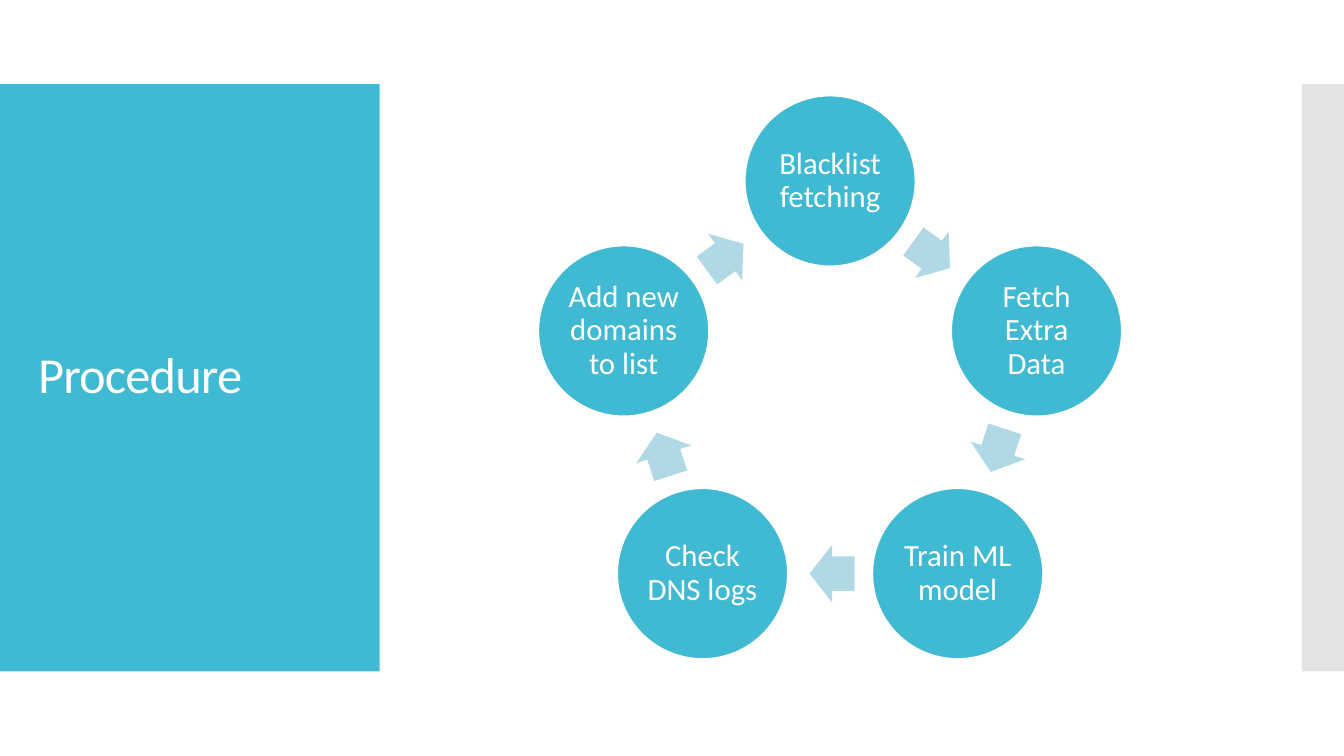
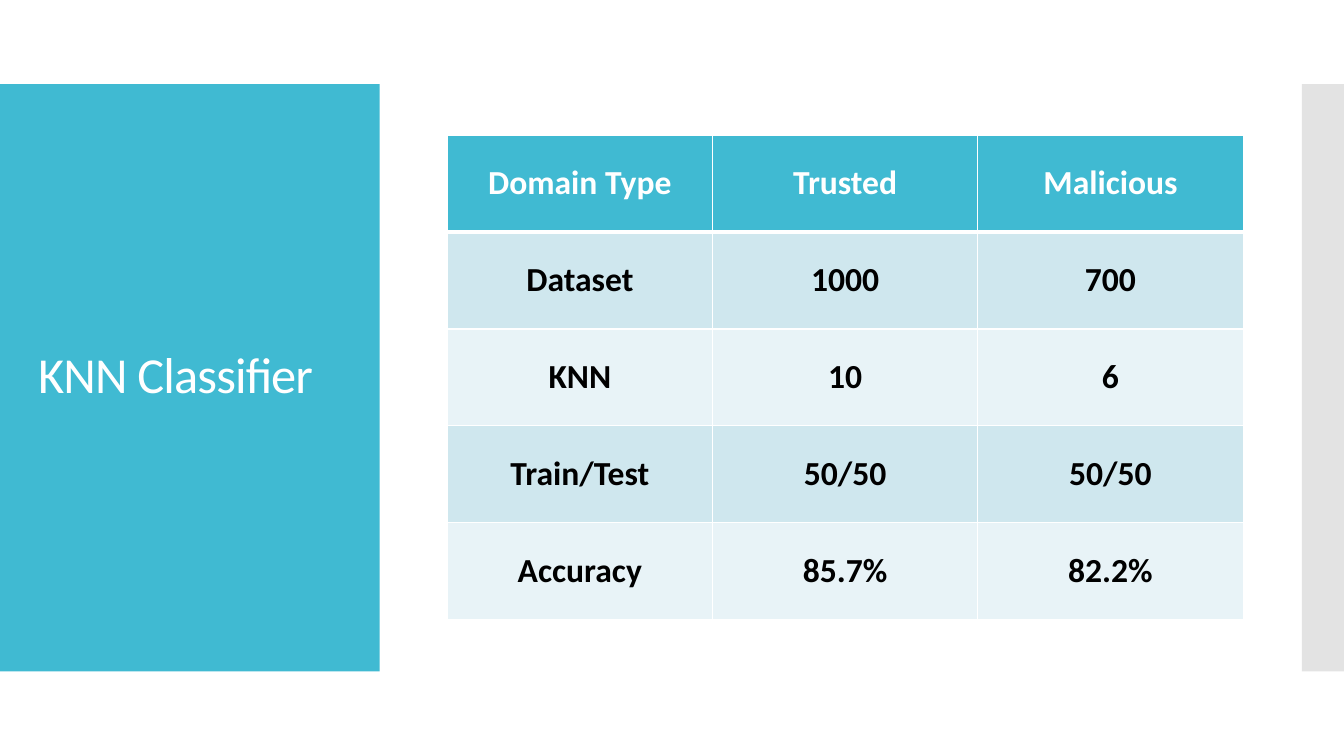
"""Builds two slides: the procedure cycle and the KNN classifier results."""
from dataclasses import dataclass
from math import cos, pi, radians, sin

from lxml import etree
from pptx import Presentation
from pptx.dml.color import RGBColor
from pptx.enum.shapes import MSO_SHAPE
from pptx.enum.text import MSO_ANCHOR, PP_ALIGN
from pptx.oxml.ns import qn
from pptx.util import Cm, Pt

RECTANGLE = MSO_SHAPE.RECTANGLE
OVAL = MSO_SHAPE.OVAL
RIGHT_ARROW = MSO_SHAPE.RIGHT_ARROW
MIDDLE = MSO_ANCHOR.MIDDLE
LEFT = PP_ALIGN.LEFT
CENTER = PP_ALIGN.CENTER

SLIDE_WIDTH, SLIDE_HEIGHT = 33.87, 19.05
BAND_TOP, BAND_HEIGHT = 2.12, 14.8
TITLE_BAND_WIDTH, EDGE_BAND_WIDTH = 9.57, 1.06

STEPS = [
    "Blacklist fetching",
    "Fetch Extra Data",
    "Train ML model",
    "Check DNS logs",
    "Add new domains to list",
]
RESULTS = [
    ["Domain Type", "Trusted", "Malicious"],
    ["Dataset", "1000", "700"],
    ["KNN", "10", "6"],
    ["Train/Test", "50/50", "50/50"],
    ["Accuracy", "85.7%", "82.2%"],
]


@dataclass(frozen=True)
class Theme:
    font: str = "Calibri"
    accent: str = "40BAD2"
    arrow: str = "B0D9E5"
    edge: str = "C8C8C8"
    row_dark: str = "CFE7EE"
    row_light: str = "E8F3F7"
    white: str = "FFFFFF"
    black: str = "000000"
    title_size: float = 36
    step_size: float = 22
    table_size: float = 24
    outline: float = 0.85
    grid_line: float = 1
    header_line: float = 3


def write_text(frame, text, *, font, size, color, bold=False, align=CENTER,
               line_spacing=1.0, tracking=0):
    frame.word_wrap = True
    paragraph = frame.paragraphs[0]
    paragraph.alignment = align
    paragraph.line_spacing = line_spacing
    run = paragraph.add_run()
    run.text = text
    run.font.name = font
    run.font.size = Pt(size)
    run.font.bold = bold
    run.font.color.rgb = RGBColor.from_string(color)
    if tracking:
        run._r.get_or_add_rPr().set("spc", str(round(tracking * 100)))


def set_border(cell, side, color, width):
    line = etree.SubElement(cell._tc.get_or_add_tcPr(), qn(f"a:ln{side}"), w=str(Pt(width)))
    fill = etree.SubElement(line, qn("a:solidFill"))
    etree.SubElement(fill, qn("a:srgbClr"), val=color)


class Deck:
    def __init__(self, theme):
        self.theme = theme
        self.presentation = Presentation()
        self.presentation.slide_width = Cm(SLIDE_WIDTH)
        self.presentation.slide_height = Cm(SLIDE_HEIGHT)
        self.slide = None

    def add_slide(self, title):
        self.slide = self.presentation.slides.add_slide(self.presentation.slide_layouts[6])
        self.shape(RECTANGLE, 0, BAND_TOP, TITLE_BAND_WIDTH, BAND_HEIGHT, self.theme.accent)
        self.shape(RECTANGLE, SLIDE_WIDTH - EDGE_BAND_WIDTH, BAND_TOP, EDGE_BAND_WIDTH,
                   BAND_HEIGHT, self.theme.edge, opacity=50)
        self.title(title)

    def title(self, text):
        heading = self.slide.shapes.add_textbox(Cm(0.71), Cm(3.12), Cm(8.18), Cm(12.78))
        heading.text_frame.vertical_anchor = MIDDLE
        write_text(heading.text_frame, text, font=self.theme.font, size=self.theme.title_size,
                   color=self.theme.white, align=LEFT, line_spacing=0.9, tracking=-0.6)

    def shape(self, kind, left, top, width, height, fill, opacity=100, outline=None):
        shape = self.slide.shapes.add_shape(kind, Cm(left), Cm(top), Cm(width), Cm(height))
        shape.shadow.inherit = False
        shape.fill.solid()
        shape.fill.fore_color.rgb = RGBColor.from_string(fill)
        if opacity < 100:
            color = shape._element.spPr.find(".//" + qn("a:srgbClr"))
            etree.SubElement(color, qn("a:alpha"), val=str(opacity * 1000))
        if outline:
            shape.line.color.rgb = RGBColor.from_string(outline)
            shape.line.width = Pt(self.theme.outline)
        else:
            shape.line.fill.background()
        return shape

    def step(self, text, x, y, diameter):
        circle = self.shape(OVAL, x - diameter / 2, y - diameter / 2, diameter, diameter,
                            self.theme.accent, outline=self.theme.white)
        frame = circle.text_frame
        frame.vertical_anchor = MIDDLE
        frame.margin_left = frame.margin_right = Cm(0.08)
        frame.margin_top = frame.margin_bottom = Cm(0.08)
        write_text(frame, text, font=self.theme.font, size=self.theme.step_size,
                   color=self.theme.white, line_spacing=0.9)

    def arrow(self, x, y, angle, width=1.14, height=1.45):
        arrow = self.shape(RIGHT_ARROW, x - width / 2, y - height / 2, width, height,
                           self.theme.arrow)
        arrow.adjustments[0] = 0.6
        arrow.adjustments[1] = 0.5
        arrow.rotation = angle

    def cycle(self, steps, center_x, center_y, radius, diameter, setback):
        turn = 360 / len(steps)
        chord_distance = radius * cos(pi / len(steps))
        for index, text in enumerate(steps):
            angle = radians(index * turn)
            self.step(text, center_x + radius * sin(angle), center_y - radius * cos(angle),
                      diameter)
            heading = (index + 0.5) * turn
            angle = radians(heading)
            self.arrow(center_x + chord_distance * sin(angle) - setback * cos(angle),
                       center_y - chord_distance * cos(angle) - setback * sin(angle), heading)

    def table(self, rows, left, top, width, height):
        theme = self.theme
        frame = self.slide.shapes.add_table(len(rows), len(rows[0]), Cm(left), Cm(top),
                                            Cm(width), Cm(height))
        for row_index, row in enumerate(rows):
            header = row_index == 0
            band = theme.row_dark if row_index % 2 else theme.row_light
            widths = {
                "L": theme.grid_line,
                "R": theme.grid_line,
                "T": theme.header_line if row_index == 1 else theme.grid_line,
                "B": theme.header_line if header else theme.grid_line,
            }
            for column_index, text in enumerate(row):
                cell = frame.table.cell(row_index, column_index)
                for side, line_width in widths.items():
                    set_border(cell, side, theme.white, line_width)
                cell.fill.solid()
                cell.fill.fore_color.rgb = RGBColor.from_string(theme.accent if header else band)
                cell.vertical_anchor = MIDDLE
                write_text(cell.text_frame, text, font=theme.font, size=theme.table_size,
                           color=theme.white if header else theme.black, bold=True)


def main():
    deck = Deck(Theme())
    deck.add_slide("Procedure")
    deck.cycle(STEPS, center_x=20.92, center_y=10.03, radius=5.47, diameter=4.29, setback=0.05)
    deck.add_slide("KNN Classifier")
    deck.table(RESULTS, left=11.27, top=3.4, width=20.06, height=12.22)
    deck.presentation.save("out.pptx")


if __name__ == "__main__":
    main()
